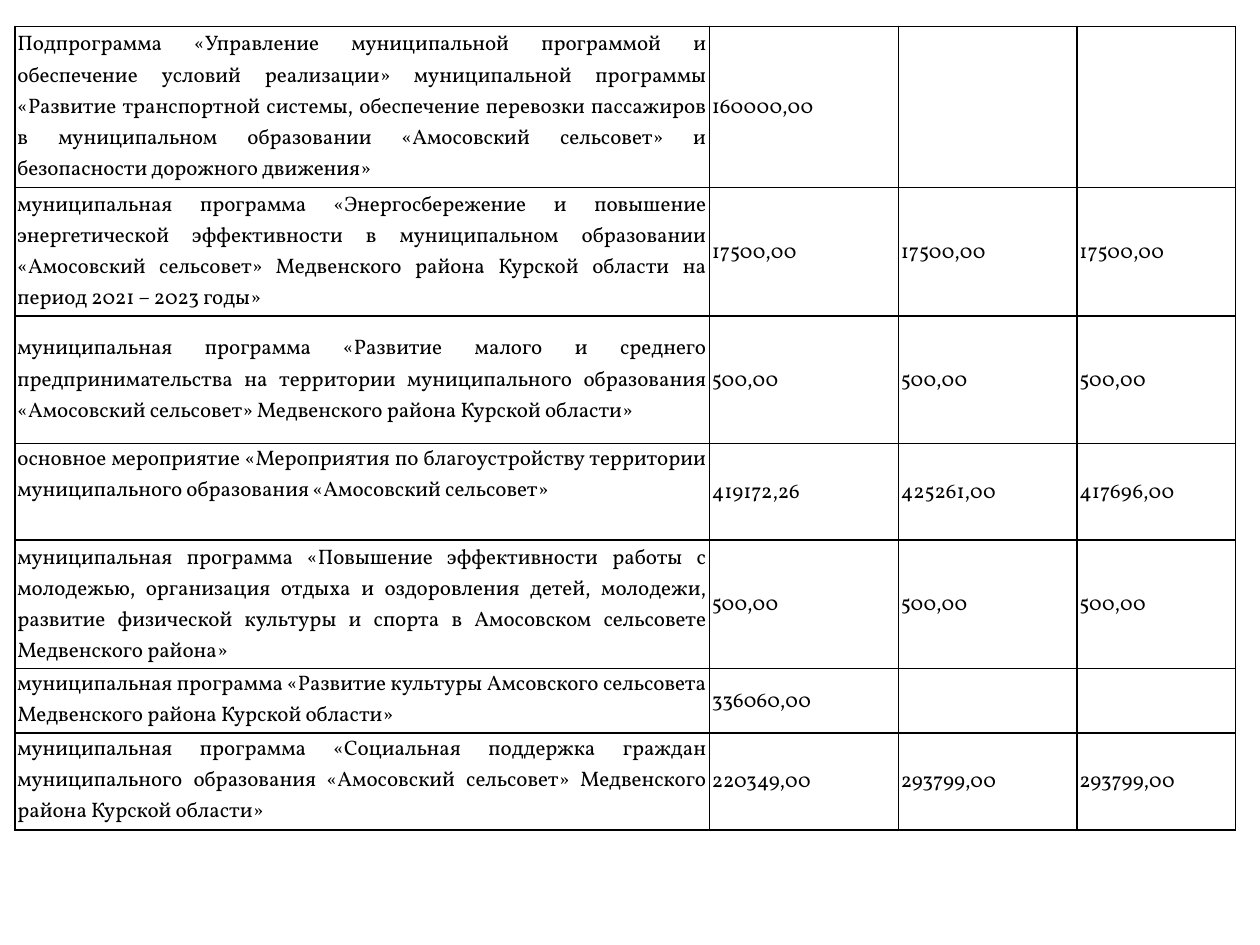
from lxml import etree
from pptx import Presentation
from pptx.dml.color import RGBColor
from pptx.enum import text
from pptx.oxml import ns
from pptx.util import Cm, Pt

BLACK = RGBColor(0x00, 0x00, 0x00)
WHITE = RGBColor(0xFF, 0xFF, 0xFF)

COLUMN_WIDTHS = [14, 3.81, 3.6, 3.2]
MIDDLE = text.MSO_ANCHOR.MIDDLE
TOP = text.MSO_ANCHOR.TOP

# Row height in cm, anchor of the programme name, programme name, yearly amounts
PROGRAMMES = [
    (3.25, MIDDLE, "Подпрограмма «Управление муниципальной программой и обеспечение условий "
     "реализации» муниципальной программы «Развитие транспортной системы, обеспечение "
     "перевозки пассажиров в муниципальном образовании «Амосовский сельсовет» и "
     "безопасности дорожного движения»",
     ["160000,00", "", ""]),
    (2.59, MIDDLE, "муниципальная программа «Энергосбережение и повышение энергетической "
     "эффективности в муниципальном образовании «Амосовский сельсовет» Медвенского района "
     "Курской области на период 2021 – 2023 годы»",
     ["17500,00"] * 3),
    (2.57, MIDDLE, "муниципальная программа «Развитие малого и среднего предпринимательства "
     "на территории муниципального образования «Амосовский сельсовет» Медвенского района "
     "Курской области»",
     ["500,00"] * 3),
    (1.95, TOP, "основное мероприятие «Мероприятия по благоустройству территории "
     "муниципального образования «Амосовский сельсовет»",
     ["419172,26", "425261,00", "417696,00"]),
    (2.59, MIDDLE, "муниципальная программа «Повышение эффективности работы с молодежью, "
     "организация отдыха и оздоровления детей, молодежи, развитие физической культуры и "
     "спорта в Амосовском сельсовете Медвенского района»",
     ["500,00"] * 3),
    (1.3, TOP, "муниципальная программа «Развитие культуры Амсовского сельсовета "
     "Медвенского района Курской области»",
     ["336060,00", "", ""]),
    (1.95, TOP, "муниципальная программа «Социальная поддержка граждан муниципального "
     "образования «Амосовский сельсовет» Медвенского района Курской области»",
     ["220349,00", "293799,00", "293799,00"]),
]


class SlideBuilder:
    font_name = "Vollkorn"
    font_size = Pt(12)
    line_spacing = 1.07
    side_margin = Cm(0.05)
    border_width = Pt(1)

    def __init__(self, slide):
        self.slide = slide

    def add_table(self, left, top, column_widths, rows):
        heights = [row[0] for row in rows]
        table = self.slide.shapes.add_table(
            len(rows), len(column_widths), Cm(left), Cm(top),
            Cm(sum(column_widths)), Cm(sum(heights))).table
        table.first_row = table.horz_banding = False
        for column, width in zip(table.columns, column_widths):
            column.width = Cm(width)
        for table_row, (height, name_anchor, name, amounts) in zip(table.rows, rows):
            table_row.height = Cm(height)
            name_cell, *amount_cells = table_row.cells
            self.fill_cell(name_cell, name, name_anchor)
            for cell, amount in zip(amount_cells, amounts):
                self.fill_cell(cell, amount, MIDDLE)

    def fill_cell(self, cell, content, anchor):
        cell.text = content
        cell.vertical_anchor = anchor
        cell.margin_left = cell.margin_right = self.side_margin
        cell.margin_top = cell.margin_bottom = 0
        self.add_borders(cell)
        cell.fill.solid()
        cell.fill.fore_color.rgb = WHITE
        paragraph = cell.text_frame.paragraphs[0]
        paragraph.alignment = text.PP_ALIGN.JUSTIFY
        paragraph.line_spacing = self.line_spacing
        paragraph.font.name = self.font_name
        paragraph.font.size = self.font_size
        paragraph.font.color.rgb = BLACK

    def add_borders(self, cell):
        """Draw all four cell edges; must run before the fill, which follows them in the XML."""
        properties = cell._tc.get_or_add_tcPr()
        for edge in ("a:lnL", "a:lnR", "a:lnT", "a:lnB"):
            line = etree.SubElement(properties, ns.qn(edge), w=str(self.border_width))
            fill = etree.SubElement(line, ns.qn("a:solidFill"))
            etree.SubElement(fill, ns.qn("a:srgbClr"), val=str(BLACK))


def main():
    presentation = Presentation()
    presentation.slide_width, presentation.slide_height = Cm(25.4), Cm(19.05)
    slide = presentation.slides.add_slide(presentation.slide_layouts[6])
    SlideBuilder(slide).add_table(0.3, 0.53, COLUMN_WIDTHS, PROGRAMMES)
    presentation.save("out.pptx")


if __name__ == "__main__":
    main()
